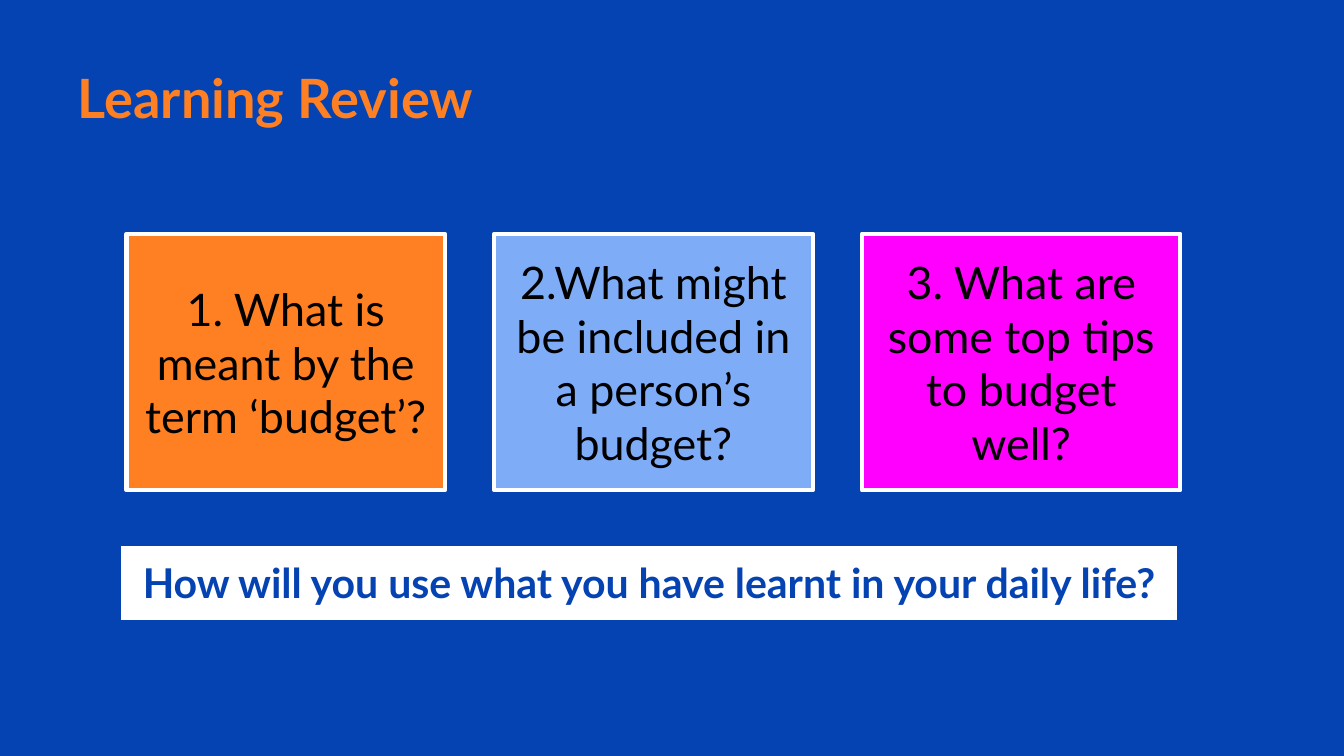
import pptx
import pptx.dml.color
import pptx.enum.shapes
import pptx.enum.text
import pptx.util
from pptx.util import Cm

BLUE = "0543B3"
ORANGE = "FF8022"
WHITE = "FFFFFF"
BLACK = "000000"


def color(value):
    return pptx.dml.color.RGBColor.from_string(value)


class SlideBuilder:
    font = "Lato"
    inset = Cm(0.25)

    def __init__(self, deck, background):
        self.page = deck.slides.add_slide(deck.slide_layouts[5])
        self.page.background.fill.solid()
        self.page.background.fill.fore_color.rgb = color(background)

    def set_text(self, box, text, size, ink, bold, align, anchor):
        frame = box.text_frame
        frame.word_wrap = True
        frame.auto_size = pptx.enum.text.MSO_AUTO_SIZE.NONE
        frame.vertical_anchor = anchor
        frame.margin_left = frame.margin_right = self.inset
        frame.margin_top = frame.margin_bottom = self.inset
        para = frame.paragraphs[0]
        para.text = text
        para.alignment = align
        para.font.name = self.font
        para.font.size = pptx.util.Pt(size)
        para.font.bold = bold
        para.font.color.rgb = color(ink)

    def title(self, text, left, top, width, height):
        box = self.page.shapes.title
        box.left, box.top, box.width, box.height = left, top, width, height
        self.set_text(box, text, 29, ORANGE, True,
                      pptx.enum.text.PP_ALIGN.LEFT, pptx.enum.text.MSO_ANCHOR.MIDDLE)

    def panel(self, text, left, top, width, height, fill, line, line_width,
              size, ink, bold=False, anchor=pptx.enum.text.MSO_ANCHOR.MIDDLE):
        box = self.page.shapes.add_shape(
            pptx.enum.shapes.MSO_SHAPE.RECTANGLE, left, top, width, height)
        box.shadow.inherit = False
        box.fill.solid()
        box.fill.fore_color.rgb = color(fill)
        box.line.color.rgb = color(line)
        box.line.width = pptx.util.Pt(line_width)
        self.set_text(box, text, size, ink, bold,
                      pptx.enum.text.PP_ALIGN.CENTER, anchor)


def main():
    deck = pptx.Presentation()
    deck.slide_width = Cm(25.4)
    deck.slide_height = Cm(14.29)
    slide = SlideBuilder(deck, BLUE)
    slide.title("Learning Review", Cm(1.22), Cm(1.12), Cm(16.2), Cm(1.42))

    questions = [
        ("1. What is meant by the term ‘budget’?", ORANGE),
        ("2.What might be included in a person’s budget?", "7EACF7"),
        ("3. What are some top tips to budget well?", "FF00FF"),
    ]
    for index, (question, fill) in enumerate(questions):
        slide.panel(question, Cm(2.39 + index * 6.95), Cm(4.42), Cm(6.02), Cm(4.85),
                    fill, WHITE, 2.25, 24, BLACK)

    slide.panel("How will you use what you have learnt in your daily life?",
                Cm(2.26), Cm(10.29), Cm(20.02), Cm(1.45), WHITE, BLUE, 1.5,
                22, BLUE, bold=True, anchor=pptx.enum.text.MSO_ANCHOR.TOP)
    deck.save("out.pptx")


if __name__ == "__main__":
    main()
